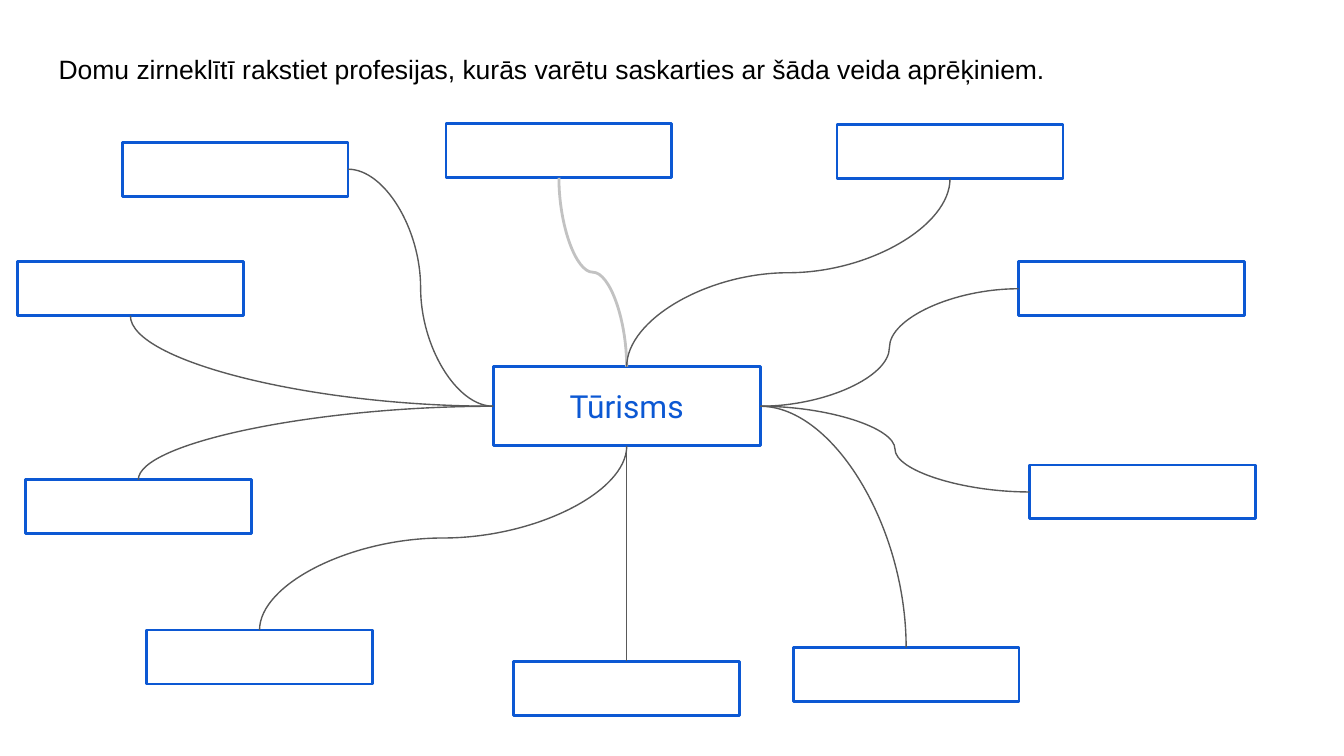
from pptx import Presentation
from pptx.dml.color import RGBColor
from pptx.enum.shapes import MSO_CONNECTOR, MSO_SHAPE
from pptx.enum.text import MSO_ANCHOR, PP_ALIGN
from pptx.oxml.ns import qn
from pptx.oxml.xmlchemy import OxmlElement
from pptx.util import Cm, Pt

RECT = MSO_SHAPE.RECTANGLE
CURVE = MSO_CONNECTOR.CURVE
CENTER = PP_ALIGN.CENTER
MIDDLE = MSO_ANCHOR.MIDDLE
TOP, LEFT, BOTTOM, RIGHT = range(4)

# Content: lengths in cm
TITLE = "Domu zirneklītī rakstiet profesijas, kurās varētu saskarties ar šāda veida aprēķiniem."
TOPIC = "Tūrisms"
BLUE, GRAY, PALE = "0C58D3", "595959", "C2C2C2"
HUB = (9.32, 6.93, 5.05, 1.5)
LEAF = (4.27, 1.02)

# Each leaf: left, top, hub side, leaf side, line colour, line width
LEAVES = [
    (8.43, 2.34, TOP, BOTTOM, PALE, 1.5),
    (15.82, 2.36, TOP, BOTTOM, GRAY, 0.75),
    (19.25, 4.95, RIGHT, LEFT, GRAY, 0.75),
    (19.46, 8.79, RIGHT, LEFT, GRAY, 0.75),
    (14.99, 12.24, RIGHT, TOP, GRAY, 0.75),
    (9.71, 12.5, BOTTOM, TOP, GRAY, 0.75),
    (2.77, 11.91, BOTTOM, TOP, GRAY, 0.75),
    (0.48, 9.07, LEFT, TOP, GRAY, 0.75),
    (0.33, 4.95, LEFT, BOTTOM, GRAY, 0.75),
    (2.31, 2.69, LEFT, RIGHT, GRAY, 0.75),
]


def color(text):
    return RGBColor.from_string(text)


def style(para, font, size, tint):
    para.font.name = font
    para.font.size = Pt(size)
    para.font.color.rgb = color(tint)


def pad(frame):
    frame.word_wrap = True
    frame.margin_left = frame.margin_right = Cm(0.25)
    frame.margin_top = frame.margin_bottom = Cm(0.25)


def add_box(slide, x, y, w, h):
    box = slide.shapes.add_shape(RECT, Cm(x), Cm(y), Cm(w), Cm(h))
    box.shadow.inherit = False
    box.fill.background()
    box.line.color.rgb = color(BLUE)
    box.line.width = Pt(1.5)
    return box


def side_mid(box, side):
    """Middle of one side of a box."""
    across = {LEFT: 0, RIGHT: 2}.get(side, 1)
    down = {TOP: 0, BOTTOM: 2}.get(side, 1)
    return box.left + box.width * across // 2, box.top + box.height * down // 2


def add_curve(slide, hub, leaf, out, side, tint, width):
    x1, y1 = side_mid(hub, out)
    x2, y2 = side_mid(leaf, side)
    curve = slide.shapes.add_connector(CURVE, x1, y1, x2, y2)
    curve.begin_connect(hub, out)
    curve.end_connect(leaf, side)

    # A curve that leaves the hub vertically is a turned horizontal one
    if out in (TOP, BOTTOM):
        dx, dy = x2 - x1, y2 - y1
        turn = -1 if dy < 0 < dx else 1
        midx, midy = (x1 + x2) // 2, (y1 + y2) // 2
        wide, high = turn * dy, -turn * dx
        curve.begin_x, curve.end_x = midx - wide // 2, midx + wide // 2
        curve.begin_y, curve.end_y = midy - high // 2, midy + high // 2
        curve.rotation = 90 * turn % 360
    # From a horizontal to a vertical side a single bend is enough
    elif side in (TOP, BOTTOM):
        geom = curve.element.spPr.find(qn("a:prstGeom"))
        geom.set("prst", "curvedConnector2")

    curve.line.color.rgb = color(tint)
    curve.line.width = Pt(width)
    curve.element.spPr.append(OxmlElement("a:effectLst"))


deck = Presentation()
deck.slide_width, deck.slide_height = Cm(25.4), Cm(14.29)
slide = deck.slides.add_slide(deck.slide_layouts[6])

# Title
title = slide.shapes.add_textbox(Cm(0.86), Cm(0.76), Cm(23.67), Cm(1.6))
pad(title.text_frame)
title.text_frame.text = TITLE
style(title.text_frame.paragraphs[0], "Arial", 14.2, "000000")

# Hub
hub = add_box(slide, *HUB)
pad(hub.text_frame)
hub.text_frame.vertical_anchor = MIDDLE
hub.text_frame.text = TOPIC
topic = hub.text_frame.paragraphs[0]
topic.alignment = CENTER
style(topic, "Roboto", 17, BLUE)

# Leaves, then their curves on top
boxes = [add_box(slide, x, y, *LEAF) for x, y, *_ in LEAVES]
for box, (_, _, *link) in zip(boxes, LEAVES):
    add_curve(slide, hub, box, *link)

deck.save("out.pptx")
